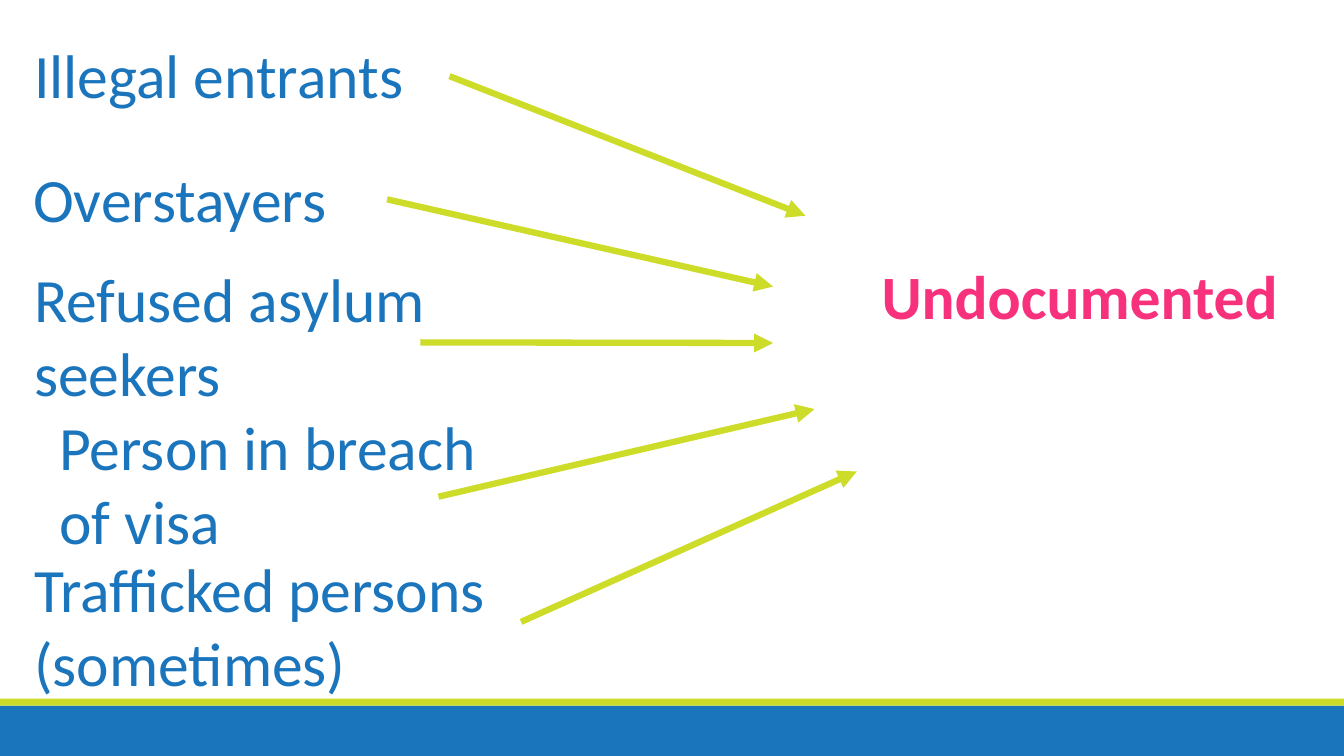
from pptx import Presentation
from pptx.dml.color import RGBColor
from pptx.enum.shapes import MSO_CONNECTOR as CONN, MSO_SHAPE as SHAPE
from pptx.enum.text import MSO_ANCHOR as ANCHOR, MSO_AUTO_SIZE as AUTO, PP_ALIGN as ALIGN
from pptx.oxml.ns import qn
from pptx.util import Pt
from lxml.etree import SubElement

WIDTH, HEIGHT = 960, 540
BLUE, LIME, PINK, WHITE = "1B75BC", "CDDC29", "F7317C", "FFFFFF"

GROUPS = [
    ("Illegal entrants", (17.3, 23, 478.8, 60.5), (321.1, 54.4), (575.3, 154.1)),
    ("Overstayers", (16.6, 111.6, 478.8, 60.5), (276.5, 142.4), (552.2, 204.7)),
    ("Refused asylum seekers", (17.3, 182.9, 299.5, 113.8), (300.2, 244.6), (552.2, 245)),
    ("Person in breach of visa", (35.3, 288.7, 320.4, 167), (313.2, 354.8), (581.8, 292.2)),
    ("Trafficked persons (sometimes)", (17.3, 390.2, 478.8, 113.8), (372.2, 444.2), (612, 336.8)),
]


def rgb(hex_code):
    """Turn a hex string into a colour."""
    return RGBColor.from_string(hex_code)


def write(sp, text, color, align=ALIGN.LEFT, bold=False):
    """Write one large wrapped paragraph into a shape."""
    tf = sp.text_frame
    tf.word_wrap = True
    tf.auto_size = AUTO.NONE
    tf.vertical_anchor = ANCHOR.TOP
    p = tf.paragraphs[0]
    p.text = text
    p.alignment = align
    p.line_spacing = 1.0
    p.space_before = Pt(0)
    p.font.name, p.font.size, p.font.bold = "Calibri", Pt(44), bold
    p.font.color.rgb = rgb(color)


def add_footer(s, top, height, stripe):
    """Draw the footer band with a stripe along its top."""
    for y, h, color in ((top, height, BLUE), (top - stripe, stripe, LIME)):
        sp = s.shapes.add_shape(SHAPE.RECTANGLE, 0, Pt(y), Pt(WIDTH), Pt(h))
        sp.shadow.inherit = False
        sp.fill.solid()
        sp.fill.fore_color.rgb = rgb(color)
        sp.line.fill.background()


def set_title(s, text, box):
    """Place the outcome in the title placeholder."""
    sp = s.shapes.title
    sp.left, sp.top, sp.width, sp.height = map(Pt, box)
    sp.fill.solid()
    sp.fill.fore_color.rgb = rgb(WHITE)
    write(sp, text, PINK, ALIGN.CENTER, True)


def add_arrow(s, start, end):
    """Draw an arrow between two points."""
    c = s.shapes.add_connector(CONN.STRAIGHT, *map(Pt, start + end))
    c.line.color.rgb = rgb(LIME)
    c.line.width = Pt(4.5)
    SubElement(c.line._get_or_add_ln(), qn("a:tailEnd"), type="triangle")
    SubElement(c._element.spPr, qn("a:effectLst"))


def add_group(s, text, box, start, end):
    """Add a group's label and its arrow towards the outcome."""
    write(s.shapes.add_textbox(*map(Pt, box)), text, BLUE)
    add_arrow(s, start, end)


def main():
    """Build and save the slide."""
    prs = Presentation()
    prs.slide_width, prs.slide_height = Pt(WIDTH), Pt(HEIGHT)
    s = prs.slides.add_slide(prs.slide_layouts[5])
    add_footer(s, HEIGHT - 36, 36, 5)
    set_title(s, "Undocumented", (598.3, 180.7, 346.3, 60.5))
    for group in GROUPS:
        add_group(s, *group)
    prs.save("out.pptx")


if __name__ == "__main__":
    main()
